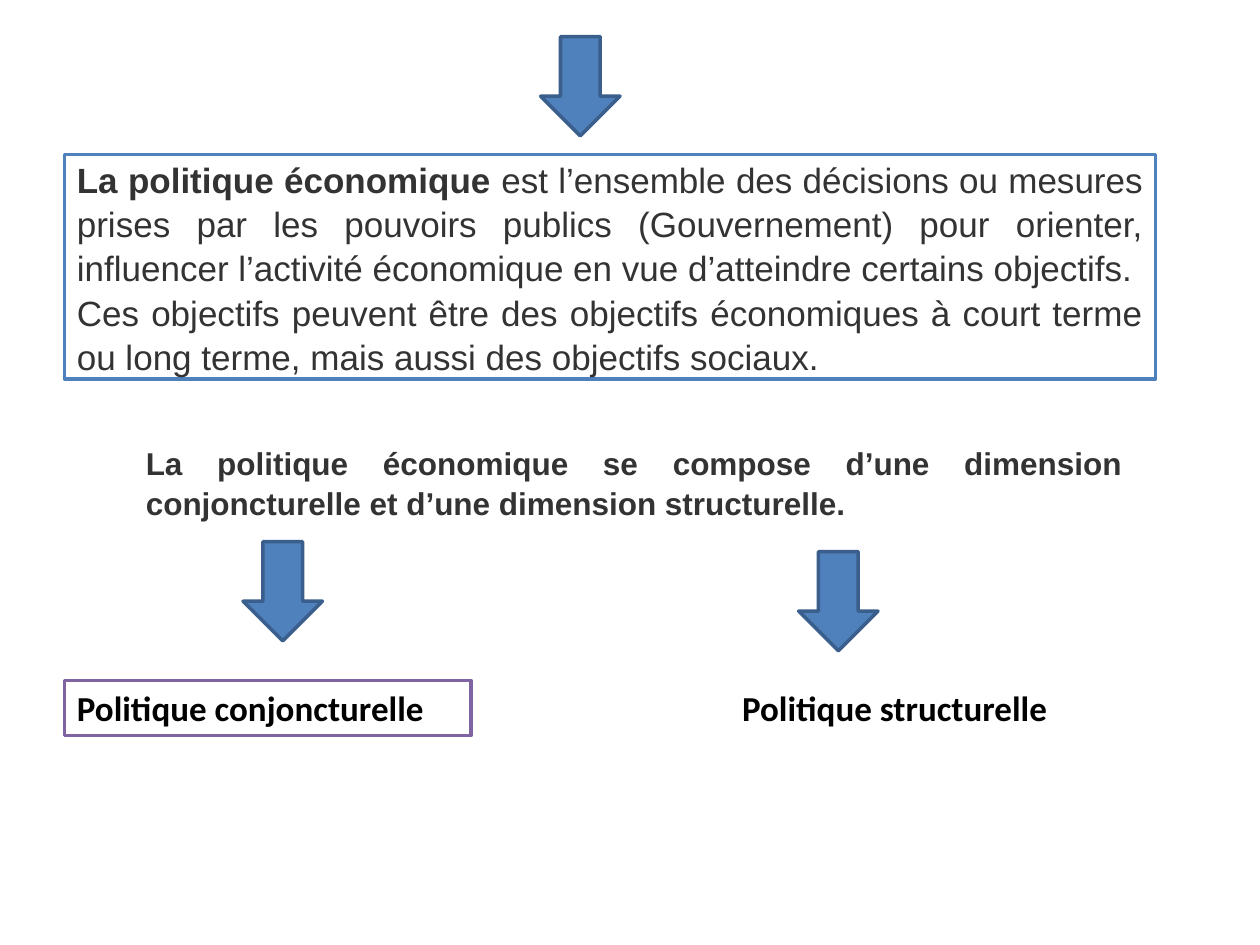
from pptx import Presentation
from pptx import util as u
from pptx.dml import color
from pptx.enum import shapes, text

COLOURS = {"white": "FFFFFF", "blue": "4F81BD", "dark blue": "3A5F8C",
           "purple": "8064A2", "grey": "333333", "black": "000000"}
ARROW_WIDTH, ARROW_HEIGHT = 1.6, 2
LABEL_HEIGHT = 1.11


def rgb(name):
    return color.RGBColor.from_string(COLOURS[name])


def add_panel(page, box, kind=shapes.MSO_SHAPE.RECTANGLE, fill="white", line="blue"):
    panel = page.shapes.add_shape(kind, *map(u.Cm, box))
    panel.shadow.inherit = False
    panel.fill.solid()
    panel.fill.fore_color.rgb = rgb(fill)
    panel.line.color.rgb = rgb(line)
    panel.line.width = u.Pt(2)
    return panel


def add_arrow(page, left, top):
    add_panel(page, (left, top, ARROW_WIDTH, ARROW_HEIGHT),
              shapes.MSO_SHAPE.DOWN_ARROW, "blue", "dark blue")


def write(shape, paragraphs, size=20, font="Arial", colour="grey", spacing=1.05,
          align=text.PP_ALIGN.JUSTIFY, anchor=text.MSO_ANCHOR.MIDDLE):
    """Fill a shape with paragraphs, each a list of (words, bold) pairs."""
    frame = shape.text_frame
    frame.word_wrap = True
    frame.vertical_anchor = anchor
    for index, spans in enumerate(paragraphs):
        para = frame.paragraphs[0] if index == 0 else frame.add_paragraph()
        para.alignment = align
        para.line_spacing = spacing
        for words, bold in spans:
            span = para.add_run()
            span.text = words
            span.font.name = font
            span.font.size = u.Pt(size)
            span.font.bold = bold
            span.font.color.rgb = rgb(colour)


def add_definition(page, box):
    left, top, width, height = box
    write(add_panel(page, box), [
        [("La politique économique ", True),
         ("est l’ensemble des décisions ou mesures prises par les pouvoirs publics "
          "(Gouvernement) pour orienter, influencer l’activité économique en vue "
          "d’atteindre certains objectifs.", False)],
        [("Ces objectifs peuvent être des objectifs économiques à court terme ou long "
          "terme, mais aussi des objectifs sociaux.", False)],
    ])
    add_arrow(page, left + 9.6, top - 2.38)


def add_composition(page, box):
    sentence = page.shapes.add_textbox(*map(u.Cm, box))
    write(sentence, [[("La politique économique se compose d’une dimension conjoncturelle "
                       "et d’une dimension structurelle.", True)]], size=18)


def add_branches(page, box):
    """Place the two kinds of policy, each under its arrow."""
    left, top, width, height = box
    label_top = top + height - LABEL_HEIGHT
    framed = add_panel(page, (left, label_top, 8.2, LABEL_HEIGHT), line="purple")
    plain_width = 7.39
    plain = page.shapes.add_textbox(*map(u.Cm, (left + width - plain_width, label_top,
                                                plain_width, LABEL_HEIGHT)))
    for label, words in ((framed, "Politique conjoncturelle"),
                         (plain, "Politique structurelle")):
        write(label, [[(words, True)]], font="Calibri", colour="black", spacing=1,
              align=text.PP_ALIGN.LEFT, anchor=text.MSO_ANCHOR.TOP)
    add_arrow(page, left + 3.6, top)
    add_arrow(page, left + 14.8, top + 0.2)


def main():
    deck = Presentation()
    deck.slide_width, deck.slide_height = u.Cm(25.4), u.Cm(19.05)
    page = deck.slides.add_slide(deck.slide_layouts[6])
    add_definition(page, (1.3, 3.12, 22, 4.52))
    add_composition(page, (2.69, 8.81, 20.19, 1.8))
    add_branches(page, (1.3, 10.92, 20.8, 3.91))
    deck.save("out.pptx")


if __name__ == "__main__":
    main()
